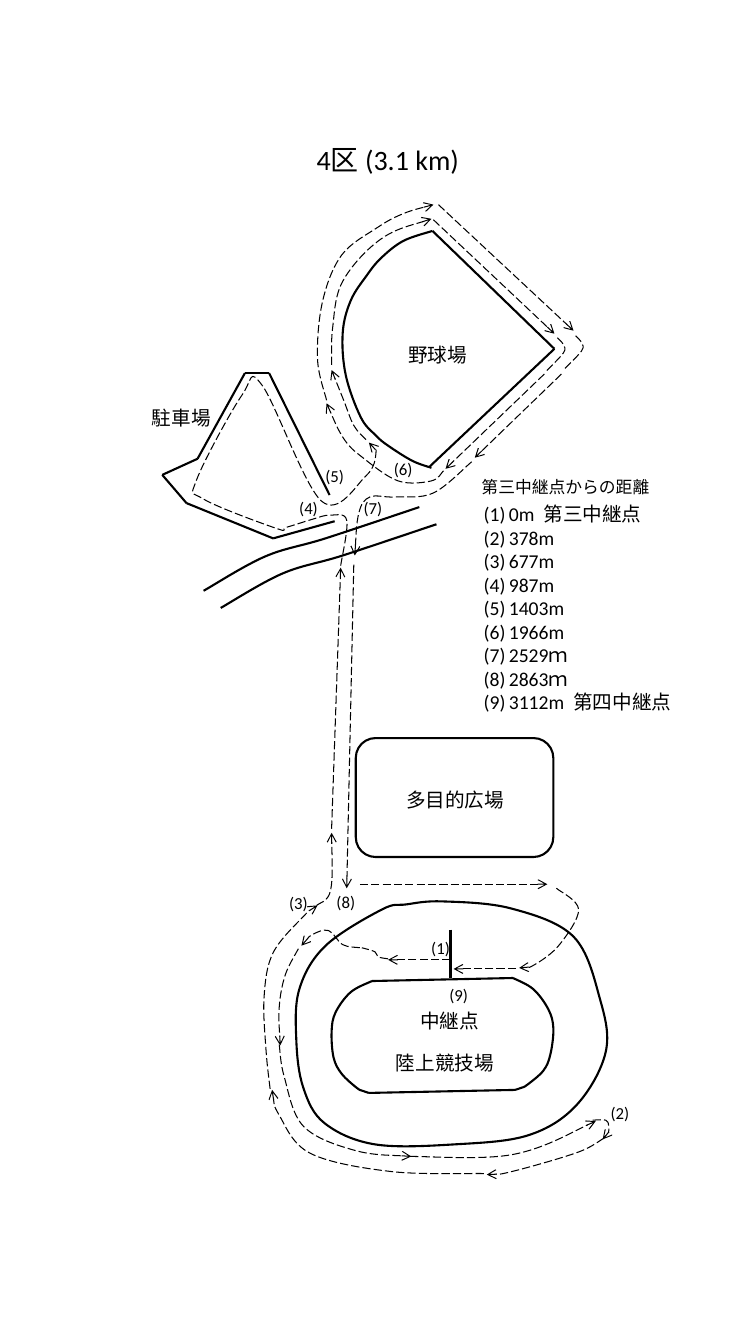
import pptx
import pptx.dml.color
import pptx.enum.dml
import pptx.enum.shapes
import pptx.enum.text
import pptx.oxml
import pptx.oxml.ns
import pptx.util
from pptx.util import Inches

BLACK = pptx.dml.color.RGBColor(0, 0, 0)
FONT = "Calibri"


def add_sub(parent, tag, **attrs):
    node = pptx.oxml.parse_xml(f"<{tag} {pptx.oxml.ns.nsdecls('a')}/>")
    for key, value in attrs.items():
        node.set(key, str(value))
    parent.append(node)
    return node


def set_ink(line, width):
    line.color.rgb = BLACK
    line.width = pptx.util.Pt(width)


def set_font(frame, size):
    for par in frame.paragraphs:
        for run in par.runs:
            run.font.name = FONT
            run.font.size = pptx.util.Pt(size)
            run.font.color.rgb = BLACK


def smooth_out(shape, closed):
    qn = pptx.oxml.ns.qn
    track = next(shape._element.iter(qn("a:path")))
    points = [(int(pt.get("x")), int(pt.get("y"))) for pt in track.iter(qn("a:pt"))]
    if closed:
        ring = [points[-2], *points, points[1]]
    else:
        ring = [points[0], *points, points[-1]]
    for line, a, b, c, d in zip(track.findall(qn("a:lnTo")), ring, ring[1:], ring[2:], ring[3:]):
        curve = add_sub(track, "a:cubicBezTo")
        add_sub(curve, "a:pt", x=round(b[0] + (c[0] - a[0]) / 6), y=round(b[1] + (c[1] - a[1]) / 6))
        add_sub(curve, "a:pt", x=round(c[0] - (d[0] - b[0]) / 6), y=round(c[1] - (d[1] - b[1]) / 6))
        add_sub(curve, "a:pt", x=c[0], y=c[1])
        track.replace(line, curve)


def draw_path(slide, box, points, dashed=False, arrow=False, closed=False):
    spots = [(Inches(box[0] + x), Inches(box[1] + y)) for x, y in points]
    if len(spots) == 2:
        shape = slide.shapes.add_connector(
            pptx.enum.shapes.MSO_CONNECTOR.STRAIGHT, *spots[0], *spots[1])
        add_sub(shape._element.spPr, "a:effectLst")
    else:
        if closed:
            spots.append(spots[0])
        maker = slide.shapes.build_freeform(*spots[0], scale=1.0)
        maker.add_line_segments(spots[1:], close=closed)
        shape = maker.convert_to_shape()
        smooth_out(shape, closed)
        shape.fill.background()
        shape.shadow.inherit = False
    set_ink(shape.line, 0.75 if dashed else 1.5)
    if dashed:
        shape.line.dash_style = pptx.enum.dml.MSO_LINE.LONG_DASH
    if arrow:
        add_sub(shape.line._get_or_add_ln(), "a:tailEnd", type="arrow")


def draw_wall(slide, box, points):
    for pair in zip(points, points[1:]):
        draw_path(slide, box, pair)


def draw_route(slide, box, paths):
    for points in paths:
        draw_path(slide, box, points, dashed=True, arrow=True)


def add_text(slide, box, text, x, y, width, size):
    label = slide.shapes.add_textbox(
        Inches(box[0] + x), Inches(box[1] + y),
        Inches(width), Inches(0.34 if size == 14 else 0.3))
    frame = label.text_frame
    frame.word_wrap = True
    frame.text = text
    set_font(frame, size)
    return label


def add_marks(slide, box, marks):
    for number, x, y in marks:
        add_text(slide, box, f"({number})", x, y, 0.43, 12)


def add_title(slide, box):
    title = slide.shapes.title
    title.left, title.top, title.width, title.height = map(Inches, box)
    frame = title.text_frame
    frame.text = "4区 (3.1 km)"
    frame.vertical_anchor = pptx.enum.text.MSO_ANCHOR.TOP
    frame.paragraphs[0].alignment = pptx.enum.text.PP_ALIGN.LEFT
    set_font(frame, 20)


def add_track(slide, box):
    draw_path(slide, box, [
        (2.39, 0.94), (3.07, 1.01), (3.69, 1.29), (3.95, 1.9), (4.01, 2.43), (3.72, 2.96),
        (3.24, 3.26), (2.51, 3.35), (1.72, 3.35), (1.22, 3.14), (1.01, 2.79), (0.94, 2.32),
        (0.97, 1.81), (1.23, 1.38), (1.79, 1.02), (2.03, 0.97)], closed=True)
    draw_path(slide, box, [(3.09, 1.7), (3.29, 1.81), (3.44, 2.01), (3.49, 2.2),
                           (3.46, 2.46), (3.39, 2.62), (3.23, 2.76), (3.17, 2.79), (3.11, 2.81)])
    draw_path(slide, box, [(1.69, 1.73), (1.48, 1.84), (1.33, 2.04), (1.29, 2.23),
                           (1.31, 2.49), (1.39, 2.65), (1.54, 2.79), (1.6, 2.82), (1.66, 2.84)])
    for line in ([(1.69, 1.73), (3.09, 1.7)], [(1.66, 2.84), (3.11, 2.81)],
                 [(2.47, 1.22), (2.47, 1.7)]):
        draw_path(slide, box, line)
    draw_path(slide, box, [(1.85, 1.51), (1.75, 1.49), (1.72, 1.44), (1.59, 1.4)], dashed=True)
    draw_route(slide, box, [
        [(2.47, 1.52), (1.85, 1.52)],
        [(1.57, 1.4), (1.4, 1.37), (1.26, 1.23), (1.1, 1.27), (0.99, 1.38)],
        [(0.96, 1.41), (0.83, 1.67), (0.77, 1.99), (0.78, 2.37)],
        [(0.77, 2.36), (0.82, 2.68), (1.01, 3.17), (1.52, 3.41), (2.08, 3.47)],
        [(2.07, 3.47), (3.09, 3.45), (3.91, 3.12)],
        [(3.88, 3.11), (4.01, 3.11), (4.04, 3.17), (4.03, 3.26), (3.98, 3.3)],
        [(3.99, 3.29), (3.73, 3.43), (3.08, 3.62), (2.83, 3.65)],
        [(2.8, 3.64), (1.88, 3.62), (1.08, 3.44), (0.77, 3.06), (0.7, 2.81)],
        [(0.68, 2.8), (0.64, 2.42), (0.62, 1.89), (0.71, 1.45), (1.02, 1.08), (1.15, 0.98)],
        [(1.57, 0.77), (3.43, 0.77)],
        [(3.52, 0.81), (3.74, 1.02), (3.55, 1.37), (3.3, 1.57), (3.15, 1.6)],
        [(3.12, 1.61), (2.5, 1.61)],
    ])
    add_marks(slide, box, [(1, 2.18, 1.25), (2, 3.96, 2.89), (3, 0.77, 0.81),
                           (8, 1.24, 0.8), (9, 2.36, 1.72)])
    add_text(slide, box, "陸上競技場", 1.83, 2.37, 1.49, 14)
    add_text(slide, box, "中継点", 2.07, 1.96, 0.85, 14)


def add_plaza(slide, box):
    plaza = slide.shapes.add_shape(
        pptx.enum.shapes.MSO_SHAPE.FLOWCHART_ALTERNATE_PROCESS, *map(Inches, box))
    plaza.fill.background()
    plaza.shadow.inherit = False
    set_ink(plaza.line, 1.5)
    add_text(slide, box, "多目的広場", 0.4, 0.45, 1.2, 14)


def add_park(slide, box):
    draw_wall(slide, box, [(2.32, 2.17), (1.71, 2.34), (0.85, 1.99), (0.61, 1.71),
                           (0.96, 1.55), (1.43, 0.7), (1.67, 0.7), (2.27, 1.91)])
    draw_route(slide, box, [
        [(2.38, 2.61), (2.44, 2.16), (2.27, 2.11), (2.1, 2.15), (1.84, 2.23), (1.74, 2.24),
         (1.02, 1.95), (0.95, 1.76), (1.4, 0.92), (1.6, 0.82), (2.19, 1.97), (2.63, 1.72),
         (2.73, 1.49), (2.66, 1.39)]])
    add_text(slide, box, "駐車場", 0.41, 0.98, 0.87, 14)
    add_marks(slide, box, [(4, 1.87, 1.89), (5, 2.13, 1.57)])


def add_road(slide, box):
    for shift in (0, 0.17):
        draw_path(slide, box, [(x + shift, y + shift) for x, y in
                               [(0.02, 0.86), (0.63, 0.52), (1.23, 0.34), (2.16, 0.03)]])
    draw_route(slide, box, [
        [(1.14, 3.98), (1.28, 3.83), (1.29, 3.26)],
        [(1.29, 3.22), (1.38, 0.63)],
        [(1.51, 0.6), (1.44, 3.81)],
    ])


def add_field(slide, box):
    draw_path(slide, box, [
        (1.29, 0.29), (1, 0.39), (0.78, 0.56), (0.64, 0.73), (0.48, 0.98), (0.4, 1.3),
        (0.43, 1.72), (0.58, 2.14), (0.73, 2.32), (0.85, 2.42), (1.09, 2.57), (1.28, 2.64)])
    draw_wall(slide, box, [(1.29, 0.29), (2.5, 1.46), (1.26, 2.63)])
    bend = [(2.53, 1.35), (2.59, 1.42), (2.59, 1.5), (2.41, 1.69)]
    for dx, dy in ((0, 0), (0.18, -0.02)):
        draw_path(slide, box, [(x + dx, y + dy) for x, y in bend], dashed=True)
    draw_route(slide, box, [
        [(0.63, 2.36), (0.51, 2.22), (0.41, 1.97), (0.29, 1.67)],
        [(0.29, 1.62), (0.3, 1.25), (0.4, 0.79), (0.78, 0.37), (1.28, 0.17)],
        [(1.3, 0.18), (2.5, 1.31)],
        [(2.4, 1.71), (1.42, 2.65)],
        [(1.4, 2.67), (1.28, 2.77), (0.95, 2.77), (0.6, 2.54), (0.41, 2.35), (0.24, 2)],
        [(0.24, 1.97), (0.15, 1.56), (0.2, 0.99), (0.39, 0.53), (0.74, 0.26), (1, 0.12),
         (1.3, 0.03)],
        [(1.35, 0.03), (2.69, 1.28)],
        [(2.57, 1.71), (1.71, 2.54)],
        [(1.68, 2.58), (1.3, 2.89), (0.92, 2.93), (0.67, 2.93), (0.56, 3.09), (0.52, 3.51)],
    ])
    add_text(slide, box, "野球場", 0.95, 1.35, 0.87, 14)
    add_marks(slide, box, [(6, 0.81, 2.5), (7, 0.51, 2.89)])


def add_list(slide, box):
    head = add_text(slide, box, "第三中継点からの距離", 0, 0, 2.14, 12)
    head.text_frame.paragraphs[0].alignment = pptx.enum.text.PP_ALIGN.CENTER
    items = ["0m  第三中継点", "378m", "677m", "987m", "1403m", "1966m",
             "2529ｍ", "2863ｍ", "3112m  第四中継点"]
    table = add_text(slide, box, "\n".join(items), 0.16, 0.25, 2.14, 14)
    table.height = Inches(2.22)
    for par in table.text_frame.paragraphs:
        props = par._p.get_or_add_pPr()
        props.set("marL", str(Inches(0.25)))
        props.set("indent", str(-Inches(0.25)))
        add_sub(props, "a:buFont", typeface=FONT)
        add_sub(props, "a:buAutoNum", type="arabicParenBoth")


def main():
    deck = pptx.Presentation()
    deck.slide_width, deck.slide_height = Inches(7.5), Inches(13.33)
    slide = deck.slides.add_slide(deck.slide_layouts[5])
    add_title(slide, (3.04, 1.36, 2.12, 0.44))
    add_track(slide, (2, 8))
    add_plaza(slide, (3.53, 7.32, 1.96, 1.18))
    add_park(slide, (1, 3))
    add_road(slide, (2, 5))
    add_field(slide, (3, 2))
    add_list(slide, (4.54, 4.68))
    deck.save("out.pptx")


if __name__ == "__main__":
    main()
